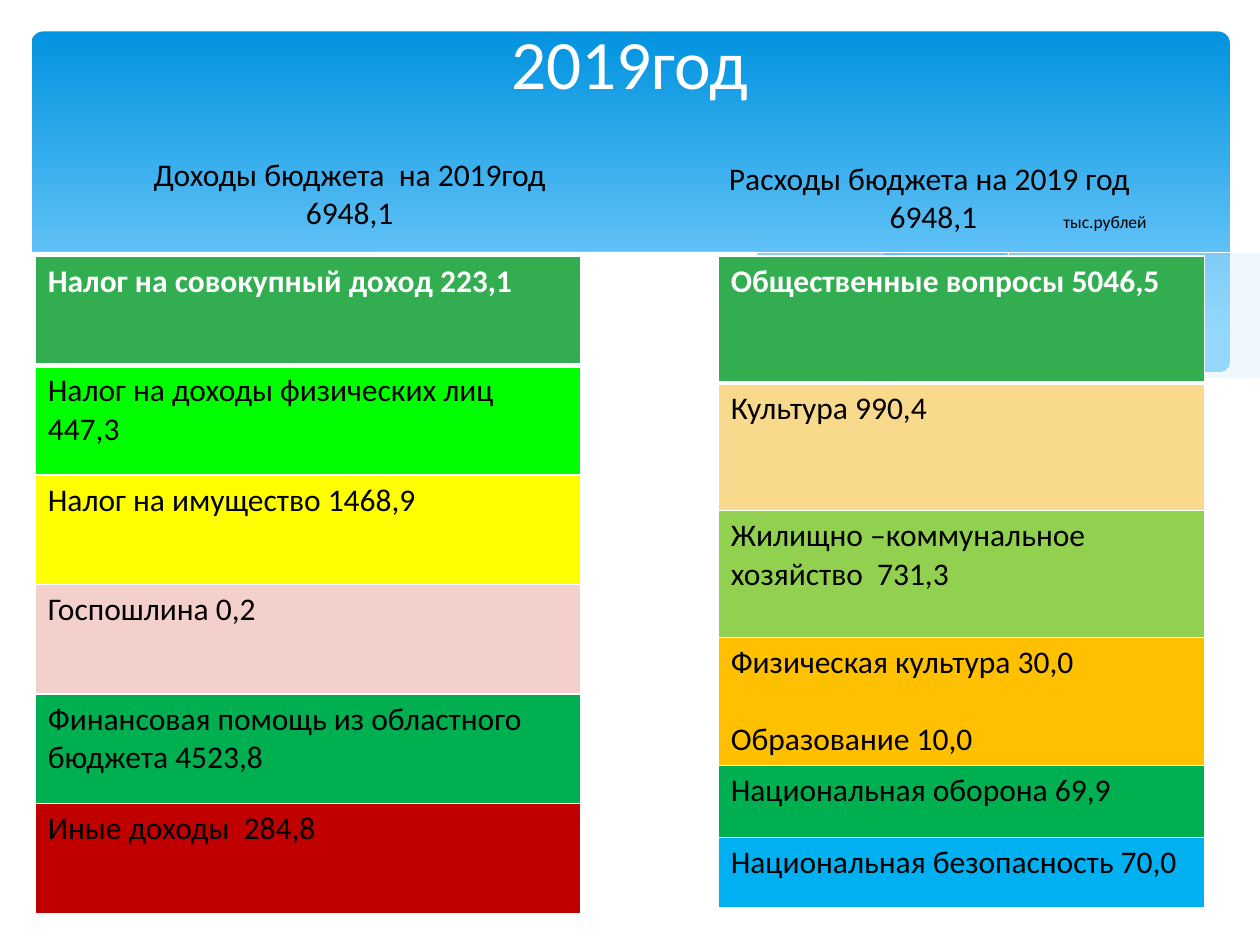
"""Build the 2019 budget slide: income and spending tables under a wave banner."""
from dataclasses import dataclass
from typing import Optional

import pptx
import pptx.dml.color
import pptx.enum.shapes
import pptx.enum.text
import pptx.oxml
import pptx.oxml.ns
import pptx.util
from lxml import etree

Inches, Pt = pptx.util.Inches, pptx.util.Pt
RGBColor = pptx.dml.color.RGBColor
PP_ALIGN = pptx.enum.text.PP_ALIGN
qn = pptx.oxml.ns.qn

FONT = "Calibri"
WHITE = RGBColor(0xFF, 0xFF, 0xFF)
BLACK = RGBColor(0x00, 0x00, 0x00)
SKY_TOP = RGBColor(0x02, 0x93, 0xE0)
SKY_BOTTOM = RGBColor(0x83, 0xD3, 0xFE)
MIST = RGBColor(0xC6, 0xE7, 0xFC)
HEAD_GREEN = RGBColor(0x32, 0xAE, 0x51)
LIME = RGBColor(0x00, 0xFF, 0x00)
YELLOW = RGBColor(0xFF, 0xFF, 0x00)
PINK = RGBColor(0xF4, 0xD0, 0xCC)
GREEN = RGBColor(0x00, 0xB0, 0x50)
RED = RGBColor(0xC0, 0x00, 0x00)
SAND = RGBColor(0xF9, 0xD9, 0x8C)
OLIVE = RGBColor(0x92, 0xD0, 0x50)
ORANGE = RGBColor(0xFF, 0xC0, 0x00)
BLUE = RGBColor(0x00, 0xB0, 0xF0)

Points = list[tuple[float, float]]


@dataclass
class Wave:
    """A filled shape or thin line bounded by smooth curves."""
    curves: list[Points]
    fill: Optional[RGBColor] = None
    alpha: int = 100


@dataclass
class Row:
    """One coloured budget row."""
    text: str
    fill: RGBColor
    height: float


WAVES = [
    Wave([[(9.76, 2), (9.35, 2.07), (8.61, 2.23), (7.79, 2.42), (6.61, 2.65)],
          [(6.61, 2.65), (7.32, 2.74), (8.03, 2.78), (8.63, 2.75), (9.21, 2.65), (9.76, 2.47)]],
         MIST, 29),
    Wave([[(8.93, 2.73), (8.07, 2.6), (7.06, 2.4), (6.29, 2.22), (5.55, 2.05), (4.89, 1.94),
           (4.2, 1.87), (3.61, 1.85), (2.86, 1.91)],
          [(2.86, 1.91), (3.62, 2.03), (4.49, 2.22), (5.66, 2.48), (6.5, 2.64), (7.22, 2.74),
           (7.96, 2.78), (8.93, 2.73)]],
         MIST, 40),
    Wave([[(3.09, 1.95), (3.44, 1.9), (4.01, 1.87), (4.69, 1.89), (5.56, 1.97), (6.36, 2.08),
           (7.27, 2.26), (8.31, 2.51), (9.07, 2.72)]]),
    Wave([[(6.13, 2.57), (6.95, 2.35), (7.76, 2.16), (8.66, 1.99), (9.24, 1.9), (9.75, 1.85)]]),
    Wave([[(9.77, 2.46), (9.4, 2.59), (8.87, 2.71), (8.09, 2.77), (7.26, 2.72), (6.48, 2.62),
           (5.55, 2.45), (4.47, 2.2), (3.65, 2.02), (2.92, 1.9), (2.3, 1.85), (1.77, 1.84),
           (1.19, 1.87), (0.76, 1.95), (0.46, 2.03), (0.23, 2.13)],
          [(0.23, 3.29), (9.77, 3.29)]],
         WHITE),
]
INCOME = [
    Row("Налог на совокупный доход 223,1", HEAD_GREEN, 0.87),
    Row("Налог на доходы физических лиц 447,3", LIME, 0.87),
    Row("Налог на имущество 1468,9", YELLOW, 0.87),
    Row("Госпошлина 0,2", PINK, 0.87),
    Row("Финансовая помощь из областного бюджета 4523,8", GREEN, 0.87),
    Row("Иные доходы  284,8", RED, 0.87),
]
SPENDING = [
    Row("Общественные вопросы 5046,5", HEAD_GREEN, 1.01),
    Row("Культура 990,4", SAND, 1.01),
    Row("Жилищно –коммунальное хозяйство  731,3", OLIVE, 1.01),
    Row("Физическая культура 30,0\nОбразование 10,0", ORANGE, 1.01),
    Row("Национальная оборона 69,9", GREEN, 0.57),
    Row("Национальная безопасность 70,0", BLUE, 0.56),
]


def smooth(knots: Points, steps: int = 5) -> Points:
    """Return points on a Catmull-Rom curve through the knots."""
    padded = [knots[0], *knots, knots[-1]]
    points = [knots[0]]
    for a, b, c, d in zip(padded, padded[1:], padded[2:], padded[3:]):
        for i in range(1, steps + 1):
            t = i / steps
            points.append(tuple(
                (2 * q + (r - p) * t + (2 * p - 5 * q + 4 * r - s) * t ** 2
                 + (3 * q - p - 3 * r + s) * t ** 3) / 2
                for p, q, r, s in zip(a, b, c, d)))
    return points


def draw_wave(s: pptx.slide.Slide, wave: Wave) -> None:
    """Draw one wave as a freeform."""
    points = [p for curve in wave.curves for p in smooth(curve)]
    builder = s.shapes.build_freeform(*points[0], scale=Inches(1))
    builder.add_line_segments(points[1:], close=wave.fill is not None)
    sp = builder.convert_to_shape()
    sp.shadow.inherit = False
    if wave.fill is None:
        sp.fill.background()
        sp.line.color.rgb = WHITE
        sp.line.width = Pt(0.25)
        return
    sp.line.fill.background()
    sp.fill.solid()
    sp.fill.fore_color.rgb = wave.fill
    if wave.alpha < 100:
        color = sp._element.spPr.find(qn("a:solidFill"))[0]
        etree.SubElement(color, qn("a:alpha"), val=str(wave.alpha * 1000))


def set_borders(cell: pptx.table._Cell, top: float, bottom: float, sides: float) -> None:
    """Give a cell white borders in points, with zero meaning none."""
    tcPr = cell._tc.get_or_add_tcPr()
    widths = {"a:lnL": sides, "a:lnR": sides, "a:lnT": top, "a:lnB": bottom}
    for i, (tag, width) in enumerate(widths.items()):
        ln = etree.Element(qn(tag), w=str(Pt(width)))
        if width:
            fill = etree.SubElement(ln, qn("a:solidFill"))
            etree.SubElement(fill, qn("a:srgbClr"), val=str(WHITE))
        else:
            etree.SubElement(ln, qn("a:noFill"))
        tcPr.insert(i, ln)


def add_table(s: pptx.slide.Slide, left: float, top: float, width: float,
              heights: list[float]) -> pptx.table.Table:
    """Add a one-column table without banding."""
    table = s.shapes.add_table(len(heights), 1, Inches(left), Inches(top),
                               Inches(width), Inches(sum(heights))).table
    table.first_row = table.horz_banding = False
    for row, height in zip(table.rows, heights):
        row.height = Inches(height)
    return table


def format_text(p: pptx.text.text._Paragraph, color: RGBColor, size: float = 18,
                bold: bool = False) -> None:
    """Set the font of a paragraph."""
    f = p.font
    f.name, f.size, f.bold = FONT, Pt(size), bold
    f.color.rgb = color


def add_heading(s: pptx.slide.Slide, left: float, top: float, width: float,
                height: float, text: str) -> pptx.text.text._Paragraph:
    """Add a clear heading table and return its last paragraph."""
    cell = add_table(s, left, top, width, [height]).cell(0, 0)
    cell.fill.background()
    set_borders(cell, 0, 0, 0)
    cell.text = text
    for p in cell.text_frame.paragraphs:
        p.alignment = PP_ALIGN.CENTER
        format_text(p, BLACK)
    return p


def add_budget(s: pptx.slide.Slide, left: float, top: float, width: float,
               rows: list[Row]) -> None:
    """Add a table of coloured budget rows."""
    table = add_table(s, left, top, width, [row.height for row in rows])
    for i, row in enumerate(rows):
        cell = table.cell(i, 0)
        cell.fill.solid()
        cell.fill.fore_color.rgb = row.fill
        set_borders(cell, 3 if i == 1 else 1, 3 if i == 0 else 1, 1)
        cell.text = row.text
        for n, p in enumerate(cell.text_frame.paragraphs):
            format_text(p, BLACK if i else WHITE, bold=i == 0)
            p.space_before = Pt(22 * n)


def main() -> None:
    """Build and save the slide."""
    prs = pptx.Presentation()
    prs.slide_width, prs.slide_height = Inches(10), Inches(7.5)
    s = prs.slides.add_slide(prs.slide_layouts[5])

    sky = s.shapes.add_shape(pptx.enum.shapes.MSO_SHAPE.ROUNDED_RECTANGLE,
                             Inches(0.25), Inches(0.25), Inches(9.51), Inches(2.7))
    sky.adjustments[0] = 0.034
    sky.shadow.inherit = False
    sky.line.fill.background()
    sky.fill.gradient()
    sky.fill.gradient_angle = 270
    for stop, position, color in zip(sky.fill.gradient_stops, (0, 0.9), (SKY_TOP, SKY_BOTTOM)):
        stop.position, stop.color.rgb = position, color
    for wave in WAVES:
        draw_wave(s, wave)

    add_heading(s, 0.52, 1.19, 4.51, 0.77, "Доходы бюджета  на 2019год\n6948,1")
    title = s.shapes.title
    s.shapes._spTree.append(title._element)
    title.left, title.top, title.width, title.height = map(Inches, (0.5, 0.3, 9, 0.38))
    tf = title.text_frame
    tf.text = "2019год"
    tf.auto_size = pptx.enum.text.MSO_AUTO_SIZE.NONE
    tf.vertical_anchor = pptx.enum.text.MSO_ANCHOR.MIDDLE
    tf.paragraphs[0].alignment = PP_ALIGN.CENTER
    format_text(tf.paragraphs[0], WHITE, 39.6)

    p = add_heading(s, 5.14, 1.22, 4.47, 0.76, "Расходы бюджета на 2019 год\n\t6948,1\t")
    p.alignment = PP_ALIGN.LEFT
    tabs = etree.Element(qn("a:tabLst"))
    for stop in (1.82, 3.2):
        etree.SubElement(tabs, qn("a:tab"), pos=str(Inches(stop)), algn="l")
    p._p.get_or_add_pPr().insert(0, tabs)
    r = p.add_run()
    r.text = "тыс.рублей"
    r.font.size = Pt(10)

    add_budget(s, 0.28, 2.03, 4.33, INCOME)
    add_budget(s, 5.7, 2.03, 3.86, SPENDING)
    prs.save("out.pptx")


if __name__ == "__main__":
    main()
